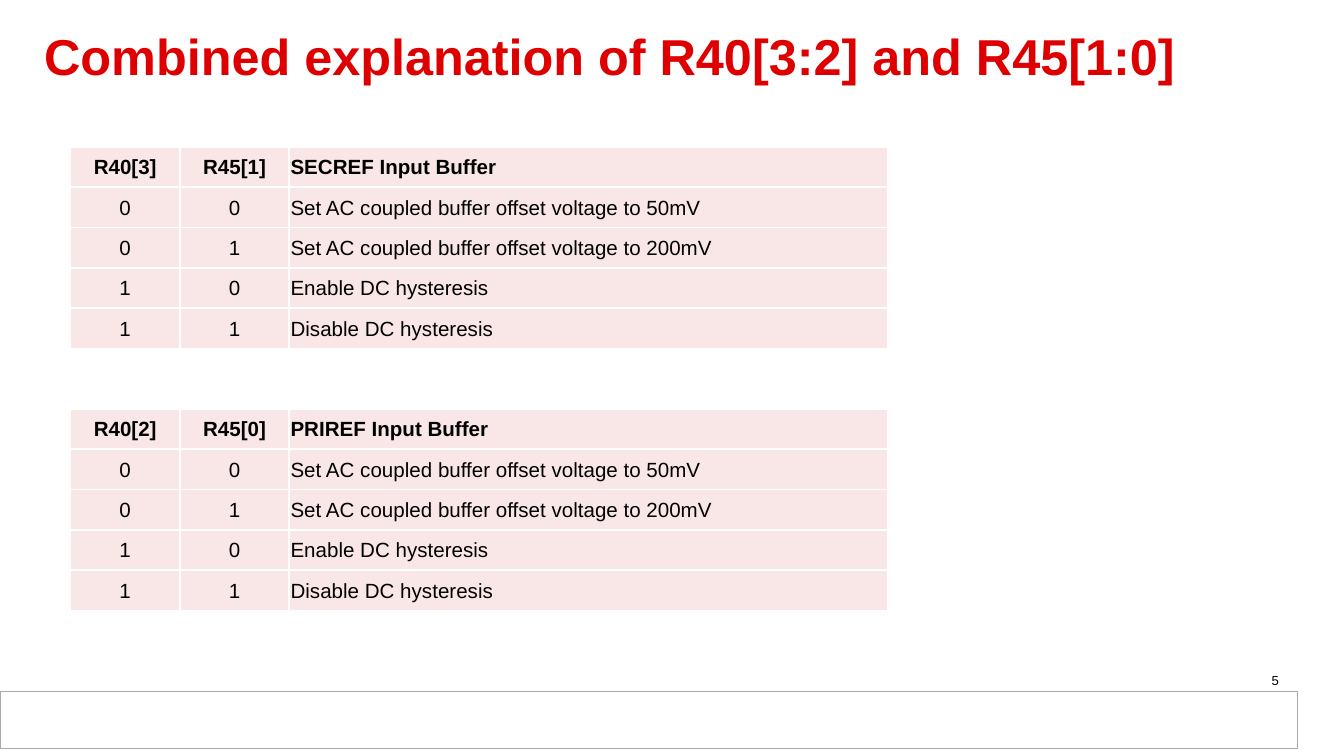
"""Build the slide explaining the R40 and R45 input buffer registers."""
from lxml import etree
from pptx import Presentation
from pptx.dml.color import RGBColor
from pptx.enum.shapes import MSO_SHAPE
from pptx.enum.text import MSO_ANCHOR, MSO_AUTO_SIZE, PP_ALIGN
from pptx.oxml.ns import qn
from pptx.util import Pt

RECTANGLE = MSO_SHAPE.RECTANGLE
MIDDLE, TOP = MSO_ANCHOR.MIDDLE, MSO_ANCHOR.TOP
NO_AUTOFIT = MSO_AUTO_SIZE.NONE
LEFT, CENTER, RIGHT = PP_ALIGN.LEFT, PP_ALIGN.CENTER, PP_ALIGN.RIGHT

TITLE = "Combined explanation of R40[3:2] and R45[1:0]"
PAGE_NUMBER = "5"
HEADERS = [
    ("R40[3]", "R45[1]", "SECREF Input Buffer"),
    ("R40[2]", "R45[0]", "PRIREF Input Buffer"),
]
SETTINGS = [
    ("0", "0", "Set AC coupled buffer offset voltage to 50mV"),
    ("0", "1", "Set AC coupled buffer offset voltage to 200mV"),
    ("1", "0", "Enable DC hysteresis"),
    ("1", "1", "Disable DC hysteresis"),
]
COLORS = {
    "title": "DE0000",
    "text": "000000",
    "cell": "F9E7E7",
    "border": "FFFFFF",
    "footer": "FFFFFF",
    "footer_line": "AAAAAA",
}
FONT = "Arial"
TABLE_LEFT, TABLE_TOP, TABLE_STEP = 37.8, 78.7, 140.4
COLUMN_WIDTHS = (58.6, 58.6, 320.8)
COLUMN_ALIGNMENTS = (CENTER, CENTER, LEFT)
ROW_HEIGHT = 21.6


def rgb(name):
    return RGBColor.from_string(COLORS[name])


def style_text(paragraph, size, color, alignment, bold=False):
    paragraph.alignment = alignment
    for run in paragraph.runs:
        run.font.name = FONT
        run.font.size = Pt(size)
        run.font.bold = bold
        run.font.color.rgb = rgb(color)


def set_frame(frame, anchor):
    frame.word_wrap = True
    frame.auto_size = NO_AUTOFIT
    frame.vertical_anchor = anchor
    frame.margin_left = frame.margin_right = Pt(5.6)
    frame.margin_top = frame.margin_bottom = Pt(2.8)


def add_borders(cell):
    properties = cell._tc.get_or_add_tcPr()
    for side in ("a:lnL", "a:lnR", "a:lnT", "a:lnB"):
        border = etree.SubElement(properties, qn(side), w=str(Pt(1)))
        fill = etree.SubElement(border, qn("a:solidFill"))
        etree.SubElement(fill, qn("a:srgbClr"), val=COLORS["border"])


def add_register_table(slide, rows, top):
    table = slide.shapes.add_table(
        len(rows), len(COLUMN_WIDTHS), Pt(TABLE_LEFT), Pt(top),
        Pt(sum(COLUMN_WIDTHS)), Pt(ROW_HEIGHT * len(rows))).table
    for column, width in zip(table.columns, COLUMN_WIDTHS):
        column.width = Pt(width)
    for row_index, values in enumerate(rows):
        table.rows[row_index].height = Pt(ROW_HEIGHT)
        for column_index, value in enumerate(values):
            cell = table.cell(row_index, column_index)
            cell.text_frame.text = value
            cell.vertical_anchor = MIDDLE
            cell.margin_left = cell.margin_right = cell.margin_top = Pt(0.7)
            cell.margin_bottom = Pt(0)
            add_borders(cell)
            cell.fill.solid()
            cell.fill.fore_color.rgb = rgb("cell")
            style_text(cell.text_frame.paragraphs[0], 11, "text",
                       COLUMN_ALIGNMENTS[column_index], row_index == 0)


def main():
    presentation = Presentation()
    presentation.slide_width, presentation.slide_height = Pt(720), Pt(405)
    slide = presentation.slides.add_slide(presentation.slide_layouts[5])

    footer = slide.shapes.add_shape(
        RECTANGLE, Pt(0), Pt(370.6), Pt(695), Pt(30.6))
    footer.shadow.inherit = False
    footer.fill.solid()
    footer.fill.fore_color.rgb = rgb("footer")
    footer.line.color.rgb = rgb("footer_line")
    footer.line.width = Pt(0.75)

    title = slide.shapes.title
    title.left, title.top, title.width, title.height = (
        Pt(18), Pt(8.4), Pt(666), Pt(48))
    title.text_frame.text = TITLE
    set_frame(title.text_frame, MIDDLE)
    heading = title.text_frame.paragraphs[0]
    heading.line_spacing = 0.85
    style_text(heading, 27, "title", LEFT, True)

    for index, header in enumerate(HEADERS):
        add_register_table(slide, [header, *SETTINGS],
                           TABLE_TOP + index * TABLE_STEP)

    page_number = slide.shapes.add_textbox(
        Pt(522.7), Pt(357.4), Pt(168), Pt(12.2))
    page_number.text_frame.text = PAGE_NUMBER
    set_frame(page_number.text_frame, TOP)
    style_text(page_number.text_frame.paragraphs[0], 7, "text", RIGHT)

    presentation.save("out.pptx")


if __name__ == "__main__":
    main()
